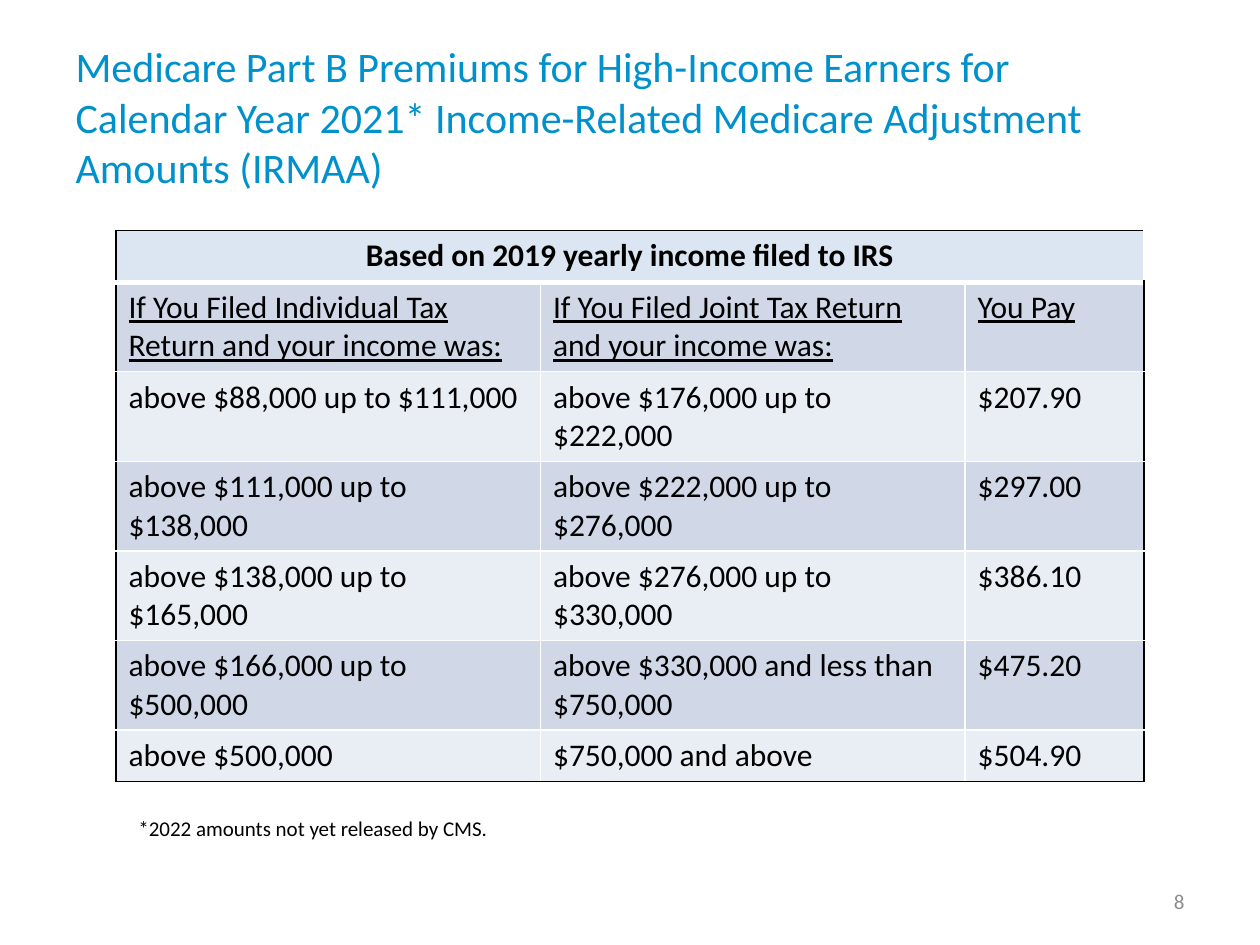
from dataclasses import dataclass

from lxml.etree import SubElement
from pptx import Presentation
from pptx.dml.color import RGBColor
from pptx.enum.text import MSO_ANCHOR, MSO_AUTO_SIZE, PP_ALIGN
from pptx.oxml.ns import qn
from pptx.util import Inches, Pt


@dataclass(frozen=True)
class Theme:
    font: str = "Calibri"
    title: str = "0091CC"
    text: str = "000000"
    number: str = "8C8C8C"
    header: str = "DCE6F2"
    bands: tuple = ("D0D8E8", "E9EDF4")
    frame: str = "000000"
    grid: str = "FFFFFF"
    title_size: int = 24
    table_size: int = 18
    small_size: int = 12


theme = Theme()


def write(tf, text, size, color, align=PP_ALIGN.LEFT):
    tf.word_wrap = True
    p = tf.paragraphs[0]
    p.text = text
    p.alignment = align
    p.font.name = theme.font
    p.font.size = Pt(size)
    p.font.color.rgb = RGBColor.from_string(color)
    return p


def add_border(cell, side, color, width):
    """Draw one cell edge; call in the order L, R, T, B and before the fill."""
    ln = SubElement(cell._tc.get_or_add_tcPr(), qn(f"a:ln{side}"), w=str(Pt(width)))
    SubElement(SubElement(ln, qn("a:solidFill")), qn("a:srgbClr"), val=color)


prs = Presentation()
prs.slide_width, prs.slide_height = Inches(10), Inches(7.5)
s = prs.slides.add_slide(prs.slide_layouts[5])

# Title
title = s.shapes.title
title.left, title.top = Inches(0.5), Inches(0.3)
title.width, title.height = Inches(9), Inches(1.25)
tf = title.text_frame
tf.auto_size = MSO_AUTO_SIZE.NONE
tf.vertical_anchor = MSO_ANCHOR.MIDDLE
write(tf, "Medicare Part B Premiums for High-Income Earners for \vCalendar Year 2021* "
      "Income-Related Medicare Adjustment Amounts (IRMAA)", theme.title_size, theme.title)

# Premium table
rows = [
    ("Based on 2019 yearly income filed to IRS", "", ""),
    ("If You Filed Individual Tax Return and your income was:",
     "If You Filed Joint Tax Return and your income was:", "You Pay"),
    ("above $88,000 up to $111,000", "above $176,000 up to $222,000", "$207.90"),
    ("above $111,000 up to $138,000", "above $222,000 up to $276,000", "$297.00"),
    ("above $138,000 up to $165,000", "above $276,000 up to $330,000", "$386.10"),
    ("above $166,000 up to $500,000", "above $330,000 and less than $750,000", "$475.20"),
    ("above $500,000", "$750,000 and above", "$504.90"),
]
col_widths = (3.37, 3.37, 1.42)
row_height = 0.41
last_row, last_col = len(rows) - 1, len(col_widths) - 1

table = s.shapes.add_table(len(rows), len(col_widths), Inches(0.92), Inches(1.83),
                           Inches(sum(col_widths)), Inches(row_height * len(rows))).table
for column, width in zip(table.columns, col_widths):
    column.width = Inches(width)
for row in table.rows:
    row.height = Inches(row_height)
table.cell(0, 0).merge(table.cell(0, last_col))

for i, row in enumerate(rows):
    for j, text in enumerate(row):
        cell = table.cell(i, j)
        outer = {"L": j == 0, "R": j == last_col, "T": i == 0, "B": i == last_row}
        for side, on_frame in outer.items():
            under_header = (i, side) in ((0, "B"), (1, "T"))
            add_border(cell, side, theme.frame if on_frame else theme.grid,
                       3 if under_header else 1)
        cell.fill.solid()
        fill = theme.header if i == 0 else theme.bands[(i - 1) % 2]
        cell.fill.fore_color.rgb = RGBColor.from_string(fill)
        if cell.is_spanned:
            continue
        p = write(cell.text_frame, text, theme.table_size, theme.text,
                  PP_ALIGN.CENTER if i == 0 else PP_ALIGN.LEFT)
        p.font.bold = i == 0
        p.font.underline = i == 1

# Footnote and slide number
footnote = s.shapes.add_textbox(Inches(1), Inches(6.42), Inches(5.42), Inches(0.3))
write(footnote.text_frame, "*2022 amounts not yet released by CMS.",
      theme.small_size, theme.text)
footnote.text_frame.auto_size = MSO_AUTO_SIZE.SHAPE_TO_FIT_TEXT

number = s.shapes.add_textbox(Inches(7.17), Inches(6.95), Inches(2.33), Inches(0.4))
number.text_frame.vertical_anchor = MSO_ANCHOR.MIDDLE
write(number.text_frame, "8", theme.small_size, theme.number, PP_ALIGN.RIGHT)

prs.save("out.pptx")
